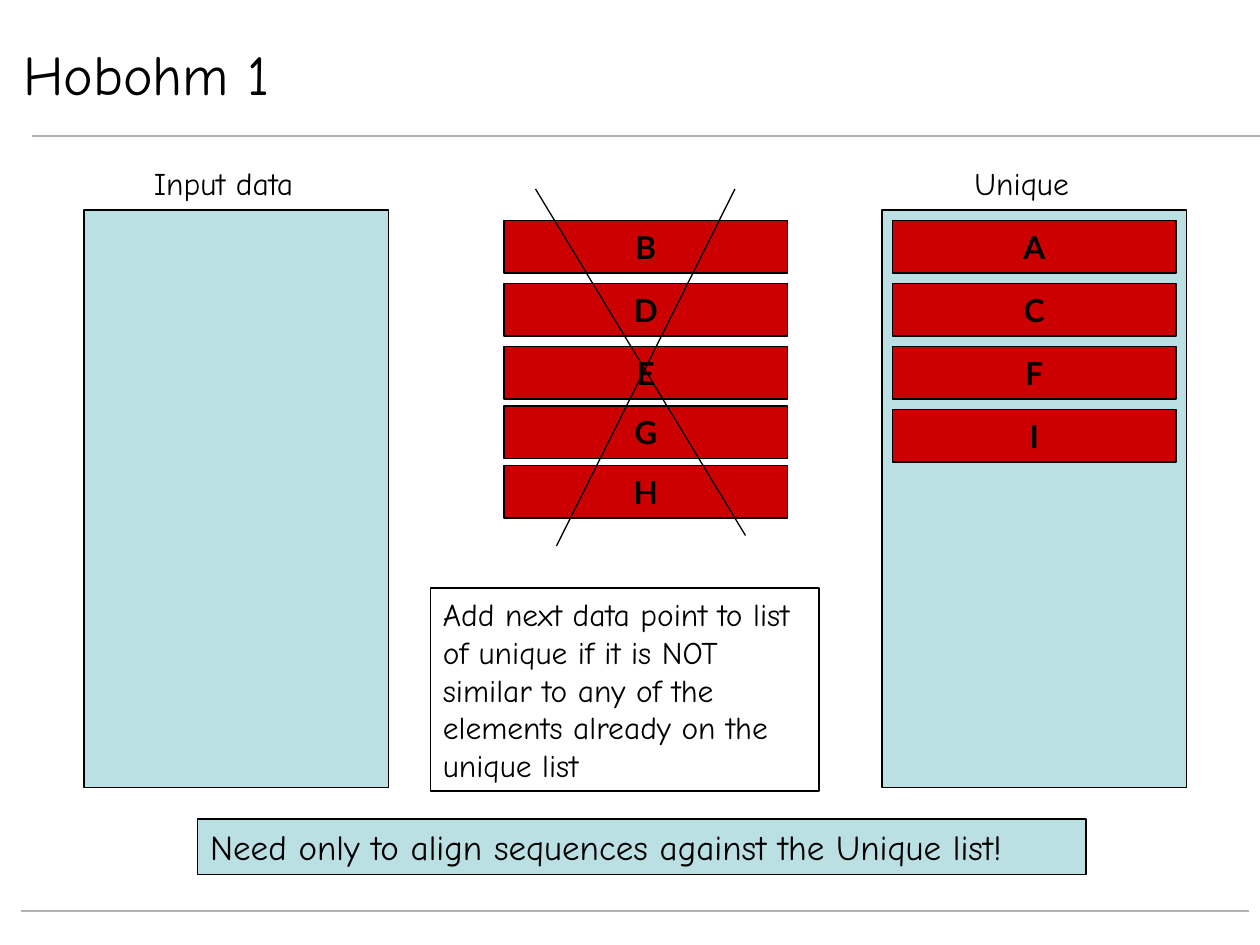
"""Build the Hobohm 1 slide about selecting unique sequences."""
import pptx
import pptx.dml.color
import pptx.enum.shapes
import pptx.enum.text
import pptx.oxml.ns
import pptx.util
from lxml import etree

Pt = pptx.util.Pt
ALIGN = pptx.enum.text.PP_ALIGN
ANCHOR = pptx.enum.text.MSO_ANCHOR
GROW = pptx.enum.text.MSO_AUTO_SIZE.SHAPE_TO_FIT_TEXT
BLACK, WHITE, GRAY, TEAL, RED = "000000", "FFFFFF", "B2B2B2", "BBE0E3", "CC0000"
BODY = {"name": "Comic Neue", "size": Pt(18)}
LABEL_FRAME = {"word_wrap": False, "auto_size": GROW}
NOTE_FRAME = {"word_wrap": True, "auto_size": GROW}
CHIP_FONT = {"name": "Lato", "size": Pt(18), "bold": True}
CHIP_FRAME = {"word_wrap": False, "vertical_anchor": ANCHOR.MIDDLE}


def color(hex_value):
    """Return the colour for a hex string."""
    return pptx.dml.color.RGBColor.from_string(hex_value)


def apply(target, values):
    """Set each named attribute on the target."""
    for name, value in values.items():
        setattr(target, name, value)


def write(shape, text, font, frame, alignment=ALIGN.LEFT):
    """Put one formatted paragraph into a shape."""
    apply(shape.text_frame, frame)
    paragraph = shape.text_frame.paragraphs[0]
    paragraph.alignment = alignment
    run = paragraph.add_run()
    run.text = text
    apply(run.font, font)
    run.font.color.rgb = color(BLACK)


def paint(shape, fill, line):
    """Give a shape its fill and thin outline."""
    if fill:
        shape.fill.solid()
        shape.fill.fore_color.rgb = color(fill)
    else:
        shape.fill.background()
    shape.line.color.rgb = color(line)
    shape.line.width = Pt(0.75)


def add_box(slide, box, fill):
    """Add an outlined rectangle."""
    shape = slide.shapes.add_shape(
        pptx.enum.shapes.MSO_SHAPE.RECTANGLE, *map(Pt, box))
    shape.shadow.inherit = False
    paint(shape, fill, BLACK)
    return shape


def add_line(slide, ends, line, width):
    """Add a straight line without a shadow."""
    connector = slide.shapes.add_connector(
        pptx.enum.shapes.MSO_CONNECTOR.STRAIGHT, *map(Pt, ends))
    connector.line.color.rgb = color(line)
    connector.line.width = Pt(width)
    properties = connector._element.spPr
    etree.SubElement(properties, pptx.oxml.ns.qn("a:effectLst"))


def add_title(slide, box, text):
    """Place and format the title placeholder."""
    title = slide.shapes.title
    apply(title, dict(zip(("left", "top", "width", "height"), map(Pt, box))))
    paint(title, WHITE, WHITE)
    write(title, text, {"name": "Comic Neue", "size": Pt(32)},
          {"word_wrap": True, "vertical_anchor": ANCHOR.MIDDLE,
           "auto_size": pptx.enum.text.MSO_AUTO_SIZE.NONE})


def add_chips(slide, letters, left, tops):
    """Stack one red chip per letter."""
    for letter, top in zip(letters, tops):
        chip = add_box(slide, (left, top, 162, 30), RED)
        write(chip, letter, CHIP_FONT, CHIP_FRAME, ALIGN.CENTER)


def add_list_column(slide, box, heading, heading_width, letters=""):
    """Add a headed list panel with its chips."""
    left, top, width, height = box
    add_box(slide, box, TEAL)
    heading_left = left + (width - heading_width) / 2 - 7.2
    label = slide.shapes.add_textbox(
        *map(Pt, (heading_left, top - 30, heading_width, 28.8)))
    write(label, heading, BODY, LABEL_FRAME, ALIGN.CENTER)
    add_chips(slide, letters, left + 6,
              [top + 6 + 36 * row for row in range(len(letters))])


def add_rejected(slide, left, top):
    """Add the rejected chips, crossed out."""
    add_chips(slide, "BDEGH", left,
              [top + offset for offset in (0, 36, 72, 106, 140)])
    for start_x, start_y, end_x, end_y in ((30, 186, 132, -18), (18, -18, 138, 180)):
        add_line(slide, (left + start_x, top + start_y,
                         left + end_x, top + end_y), BLACK, 0.75)


def add_note(slide, box, text, size, fill=None):
    """Add an outlined note with wrapped text."""
    write(add_box(slide, box, fill), text, {**BODY, "size": Pt(size)}, NOTE_FRAME)


def main():
    """Build and save the slide."""
    deck = pptx.Presentation()
    apply(deck, {"slide_width": Pt(720), "slide_height": Pt(540)})
    slide = deck.slides.add_slide(deck.slide_layouts.get_by_name("Title Only"))
    for rule_left, rule_top in ((18, 77.75), (12, 520.5)):
        add_line(slide, (rule_left, rule_top, rule_left + 702, rule_top), GRAY, 1.5)
    add_title(slide, (6, 24, 564, 36), "Hobohm 1")
    add_list_column(slide, (48, 120, 174, 330), "Input data", 104.4)
    add_list_column(slide, (504, 120, 174, 330), "Unique", 70.6, "ACFI")
    add_note(slide, (246, 336, 222, 116),
             "Add next data point to list of unique if it is NOT similar to "
             "any of the elements already on the unique list", 18)
    add_rejected(slide, 288, 126)
    add_note(slide, (113, 468, 507.6, 31.7),
             "Need only to align sequences against the Unique list!", 20, TEAL)
    deck.save("out.pptx")


if __name__ == "__main__":
    main()
